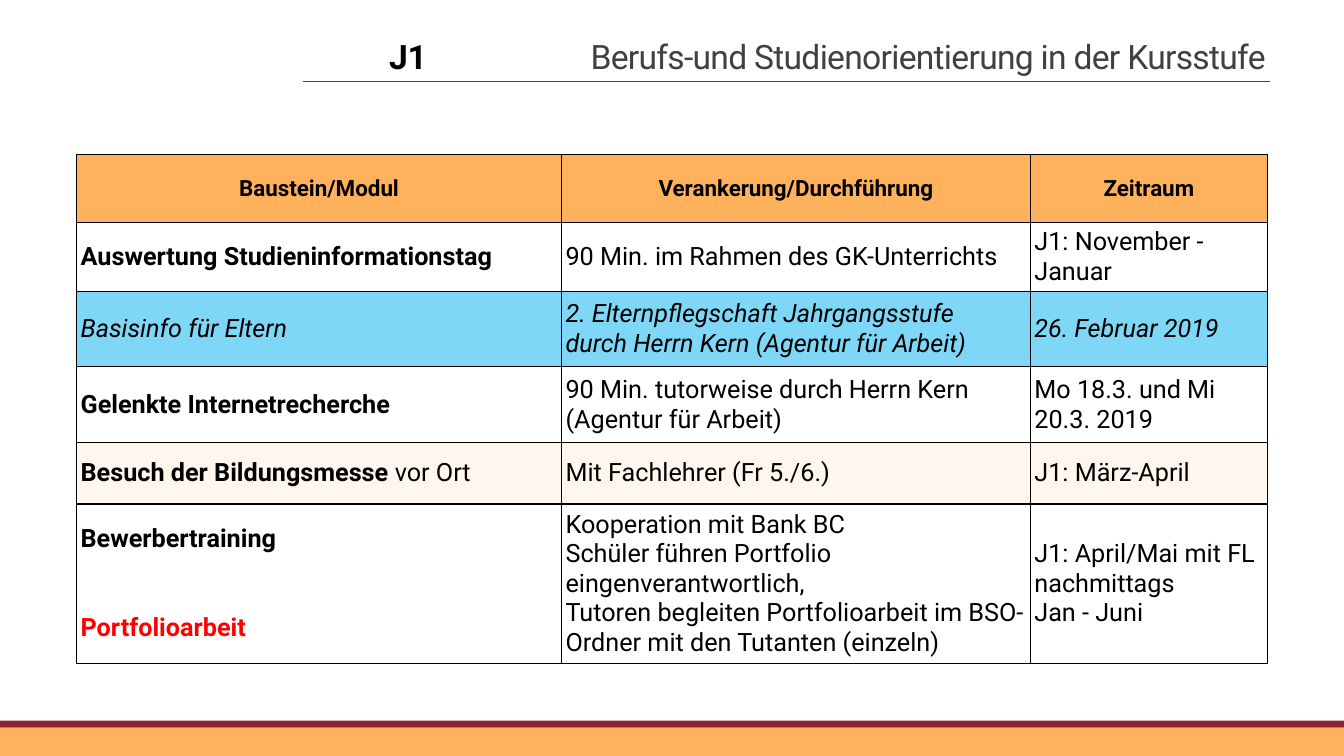
import dataclasses
import typing

import lxml.etree
import pptx
import pptx.dml.color
import pptx.enum.shapes
import pptx.enum.text
import pptx.oxml.ns
import pptx.util

SCALE = 9144
ALIGN = pptx.enum.text.PP_ALIGN
ANCHOR = pptx.enum.text.MSO_ANCHOR
qn = pptx.oxml.ns.qn


@dataclasses.dataclass(frozen=True)
class Theme:
    font: str = "Roboto"
    black: str = "000000"
    white: str = "FFFFFF"
    gray: str = "404040"
    wine: str = "862633"
    orange: str = "FFB25B"
    blue: str = "00B0F0"
    red: str = "FF0000"
    title: int = 24
    head: int = 16
    body: int = 18


THEME = Theme()


class Bar(typing.NamedTuple):
    top: int
    height: int
    color: str


class Bit(typing.NamedTuple):
    text: str
    bold: bool = False
    color: str = THEME.black
    gap: int = 0
    fresh: bool = True


class Row(typing.NamedTuple):
    height: int
    cells: list[list[Bit]]
    fill: str = THEME.white
    alpha: int = 100
    size: int = THEME.body
    italic: bool = False
    align: typing.Any = ALIGN.LEFT


BARS = [Bar(715, 7, THEME.wine), Bar(722, 28, THEME.orange)]
COLS = [481, 465, 235]
ROWS = [
    Row(68, [
        [Bit("Baustein/Modul", True)],
        [Bit("Verankerung/Durchführung", True)],
        [Bit("Zeitraum", True)],
    ], THEME.orange, size=THEME.head, align=ALIGN.CENTER),
    Row(68, [
        [Bit("Auswertung Studieninformationstag", True)],
        [Bit("90 Min. im Rahmen des GK-Unterrichts")],
        [Bit("J1: November - Januar")],
    ]),
    Row(75, [
        [Bit("Basisinfo für Eltern")],
        [Bit("2. Elternpflegschaft Jahrgangsstufe"),
         Bit("durch Herrn Kern (Agentur für Arbeit)")],
        [Bit("26. Februar 2019")],
    ], THEME.blue, 50, italic=True),
    Row(75, [
        [Bit("Gelenkte Internetrecherche", True)],
        [Bit("90 Min. tutorweise durch Herrn Kern (Agentur für Arbeit)")],
        [Bit("Mo 18.3. und Mi 20.3. 2019")],
    ]),
    Row(61, [
        [Bit("Besuch der Bildungsmesse ", True), Bit("vor Ort", fresh=False)],
        [Bit("Mit Fachlehrer (Fr 5./6.)")],
        [Bit("J1: März-April")],
    ], THEME.orange, 10),
    Row(158, [
        [Bit("Bewerbertraining", True),
         Bit("Portfolioarbeit", True, THEME.red, 42)],
        [Bit("Kooperation mit Bank BC"),
         Bit("Schüler führen Portfolio eingenverantwortlich,"),
         Bit("Tutoren begleiten Portfolioarbeit im BSO-Ordner mit den Tutanten (einzeln)")],
        [Bit("J1: April/Mai mit FL nachmittags"), Bit("Jan - Juni")],
    ]),
]


def px(n: int) -> pptx.util.Emu:
    return pptx.util.Emu(n * SCALE)


def rgb(code: str) -> pptx.dml.color.RGBColor:
    return pptx.dml.color.RGBColor.from_string(code)


def write(frame, text: str, *, size: int, color: str = THEME.black,
          bold: bool = False, italic: bool = False, align=ALIGN.LEFT,
          gap: int = 0, lead: float = 1.0, track: int = 0,
          fresh: bool = True) -> None:
    para = frame.paragraphs[-1]
    if fresh and para.runs:
        para = frame.add_paragraph()
    if fresh:
        para.alignment = align
        para.line_spacing = lead
        if gap:
            para.space_before = pptx.util.Pt(gap)
    run = para.add_run()
    run.text = text
    font = run.font
    font.name = THEME.font
    font.size = pptx.util.Pt(size)
    font.bold = bold
    font.italic = italic
    font.color.rgb = rgb(color)
    if track:
        run._r.get_or_add_rPr().set("spc", str(track))


def box(slide, left: int, top: int, width: int, height: int, *,
        anchor=ANCHOR.TOP, wrap: bool = True):
    shape = slide.shapes.add_textbox(px(left), px(top), px(width), px(height))
    frame = shape.text_frame
    frame.word_wrap = wrap
    frame.vertical_anchor = anchor
    return frame


def draw_bar(slide, bar: Bar) -> None:
    shape = slide.shapes.add_shape(
        pptx.enum.shapes.MSO_SHAPE.RECTANGLE,
        0, px(bar.top), px(1333), px(bar.height))
    shape.shadow.inherit = False
    shape.fill.solid()
    shape.fill.fore_color.rgb = rgb(bar.color)
    shape.line.fill.background()


def draw_rule(slide) -> None:
    rule = slide.shapes.add_connector(
        pptx.enum.shapes.MSO_CONNECTOR.STRAIGHT,
        px(301), px(81), px(1260), px(81))
    rule.line.color.rgb = rgb(THEME.wine)
    rule.line.width = pptx.util.Pt(1)
    lxml.etree.SubElement(rule._element.spPr, qn("a:effectLst"))


def paint(cell, row: Row) -> None:
    props = cell._tc.get_or_add_tcPr()
    for side in ("lnL", "lnR", "lnT", "lnB"):
        line = lxml.etree.SubElement(props, qn("a:" + side), w="12700")
        fill = lxml.etree.SubElement(line, qn("a:solidFill"))
        lxml.etree.SubElement(fill, qn("a:srgbClr"), val=THEME.black)
    cell.fill.solid()
    cell.fill.fore_color.rgb = rgb(row.fill)
    if row.alpha < 100:
        tint = props.find(qn("a:solidFill"))[0]
        lxml.etree.SubElement(tint, qn("a:alpha"), val=str(row.alpha * 1000))


def draw_cell(cell, row: Row, bits: list[Bit]) -> None:
    cell.margin_left = cell.margin_right = px(4)
    cell.margin_top = cell.margin_bottom = px(4)
    cell.vertical_anchor = ANCHOR.MIDDLE
    paint(cell, row)
    for bit in bits:
        write(cell.text_frame, bit.text, size=row.size, color=bit.color,
              bold=bit.bold, italic=row.italic, align=row.align,
              gap=bit.gap, fresh=bit.fresh)


def draw_table(slide) -> None:
    high = sum(row.height for row in ROWS)
    table = slide.shapes.add_table(
        len(ROWS), len(COLS), px(76), px(153), px(sum(COLS)), px(high)).table
    table.first_row = table.horz_banding = False
    for col, width in zip(table.columns, COLS):
        col.width = px(width)
    for line, row in zip(table.rows, ROWS):
        line.height = px(row.height)
        for cell, bits in zip(line.cells, row.cells):
            draw_cell(cell, row, bits)


def main() -> None:
    deck = pptx.Presentation()
    deck.slide_width, deck.slide_height = px(1333), px(750)
    slide = deck.slides.add_slide(deck.slide_layouts[6])
    for bar in BARS:
        draw_bar(slide, bar)
    draw_rule(slide)
    title = box(slide, 576, 39, 706, 42, anchor=ANCHOR.BOTTOM)
    write(title, "Berufs-und Studienorientierung in der Kursstufe",
          size=THEME.title, color=THEME.gray, lead=0.85, track=-50)
    grade = box(slide, 376, 31, 69, 50, wrap=False)
    write(grade, "J1", size=THEME.title, bold=True)
    draw_table(slide)
    deck.save("out.pptx")


if __name__ == "__main__":
    main()
